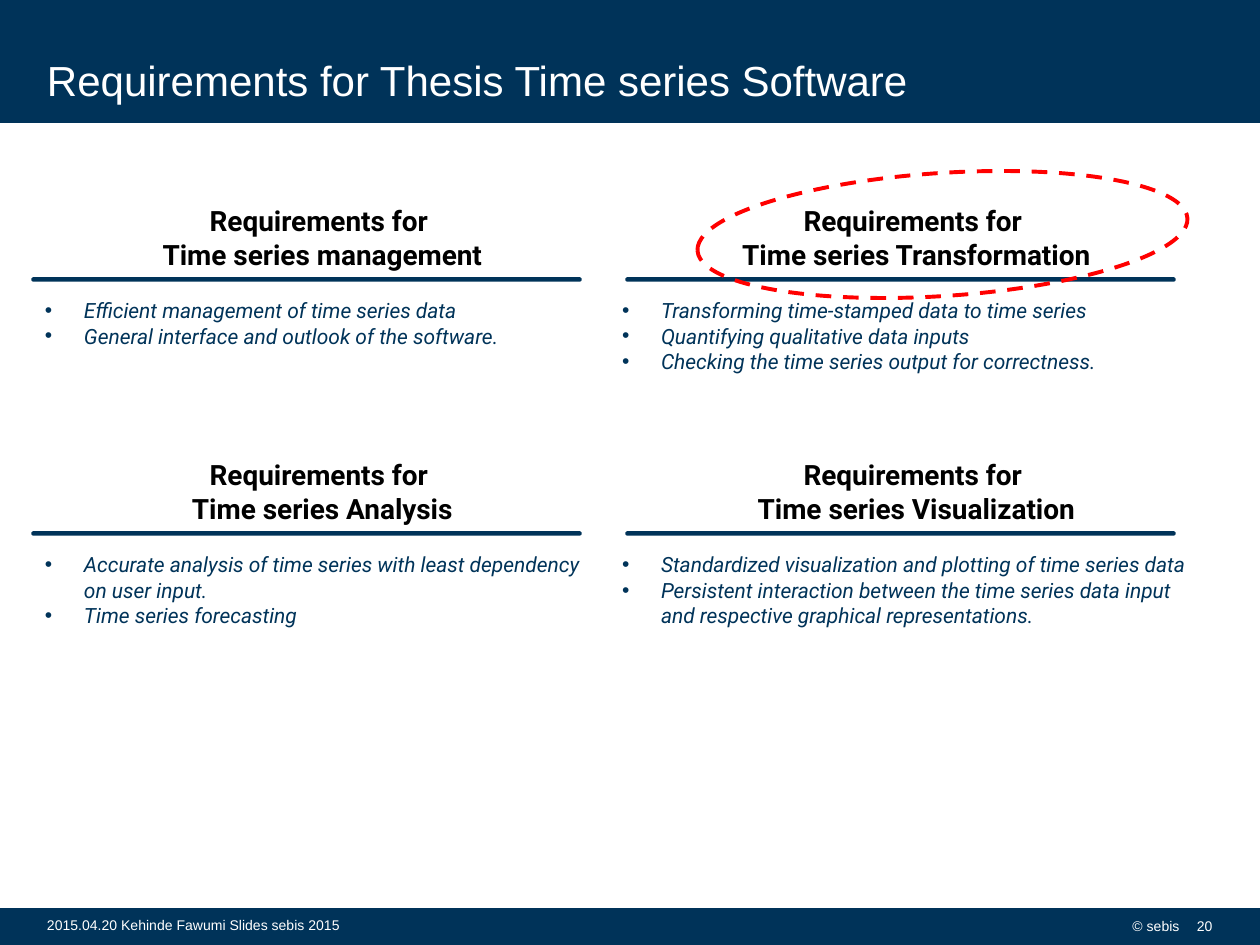
from dataclasses import dataclass
from typing import NamedTuple

from lxml.etree import SubElement
from pptx import Presentation
from pptx.dml.color import RGBColor
from pptx.enum.dml import MSO_LINE
from pptx.enum.shapes import MSO_SHAPE
from pptx.enum.text import MSO_ANCHOR, PP_ALIGN
from pptx.oxml.ns import qn
from pptx.util import Emu, Pt

PX_PER_INCH = 126


def px(length: int) -> Emu:
    return Emu(round(length * 914400 / PX_PER_INCH))


@dataclass(frozen=True)
class Theme:
    navy: RGBColor = RGBColor(0x00, 0x33, 0x59)
    white: RGBColor = RGBColor(0xFF, 0xFF, 0xFF)
    black: RGBColor = RGBColor(0x00, 0x00, 0x00)
    red: RGBColor = RGBColor(0xFF, 0x00, 0x00)
    frame_font: str = "Arial"
    content_font: str = "Roboto"
    title_size: int = 24
    heading_size: int = 16
    body_size: int = 12
    footer_size: int = 8


class Box(NamedTuple):
    left: int
    top: int
    width: int
    height: int

    def emu(self) -> list[Emu]:
        return [px(length) for length in self]


class Requirement(NamedTuple):
    topic: str
    points: list[str]


class Column(NamedTuple):
    left: int
    body_left: int
    body_width: int


class Footer(NamedTuple):
    box: Box
    text: str
    align: PP_ALIGN
    wrap: bool
    left_inset: int


THEME = Theme()
BULLET_INDENT = 39
COLUMNS = [Column(32, 32, 561), Column(626, 609, 599)]
ROW_TOPS = [198, 452]
FOOTERS = [
    Footer(Box(970, 906, 222, 40), "© sebis", PP_ALIGN.RIGHT, False, 0),
    Footer(Box(34, 905, 596, 40), "2015.04.20 Kehinde Fawumi Slides sebis 2015",
           PP_ALIGN.LEFT, True, 13),
    Footer(Box(1191, 906, 34, 40), "20", PP_ALIGN.RIGHT, False, 0),
]
REQUIREMENTS = [
    [
        Requirement("Time series management", [
            "Efficient management of time series data",
            "General interface and outlook of the software.",
        ]),
        Requirement("Time series Transformation", [
            "Transforming time-stamped data to time series",
            "Quantifying qualitative data inputs",
            "Checking the time series output for correctness.",
        ]),
    ],
    [
        Requirement("Time series Analysis", [
            "Accurate analysis of time series with least dependency on user input.",
            "Time series forecasting",
        ]),
        Requirement("Time series Visualization", [
            "Standardized visualization and plotting of time series data",
            "Persistent interaction between the time series data input "
            "and respective graphical representations.",
        ]),
    ],
]


def add_bullet(para) -> None:
    properties = para._p.get_or_add_pPr()
    properties.set("marL", str(px(BULLET_INDENT)))
    properties.set("indent", str(-px(BULLET_INDENT)))
    SubElement(properties, qn("a:buFont")).set("typeface", "Arial")
    SubElement(properties, qn("a:buChar")).set("char", "•")


def add_text(page, box: Box, *lines: str, size: int, color: RGBColor, font: str,
             bold: bool = False, italic: bool = False, bullets: bool = False,
             align: PP_ALIGN = PP_ALIGN.LEFT, anchor: MSO_ANCHOR = MSO_ANCHOR.TOP,
             wrap: bool = True, vertical_inset: int = 6, left_inset: int = 13) -> None:
    frame = page.shapes.add_textbox(*box.emu()).text_frame
    frame.word_wrap = wrap
    frame.vertical_anchor = anchor
    frame.margin_top = frame.margin_bottom = px(vertical_inset)
    frame.margin_left = px(left_inset)
    for index, line in enumerate(lines):
        para = frame.add_paragraph() if index else frame.paragraphs[0]
        para.text = line
        para.alignment = align
        if bullets:
            add_bullet(para)
        for span in para.runs:
            span.font.size = Pt(size)
            span.font.name = font
            span.font.color.rgb = color
            span.font.bold = bold
            span.font.italic = italic


def add_bar(page, box: Box, line_width: float, kind: MSO_SHAPE = MSO_SHAPE.RECTANGLE):
    bar = page.shapes.add_shape(kind, *box.emu())
    bar.shadow.inherit = False
    bar.fill.solid()
    bar.fill.fore_color.rgb = THEME.navy
    bar.line.color.rgb = THEME.navy
    bar.line.width = Pt(line_width)
    return bar


def add_frame(page) -> None:
    """Draw the title band and the footer band with their text."""
    add_bar(page, Box(0, 909, 1260, 36), 1.35)
    add_bar(page, Box(0, 1, 1260, 121), 1.35)
    add_text(page, Box(34, 6, 1038, 99), "Requirements for Thesis Time series Software",
             size=THEME.title_size, color=THEME.white, font=THEME.frame_font,
             anchor=MSO_ANCHOR.BOTTOM, vertical_inset=0)
    for footer in FOOTERS:
        add_text(page, footer.box, footer.text, size=THEME.footer_size, color=THEME.white,
                 font=THEME.frame_font, align=footer.align, anchor=MSO_ANCHOR.MIDDLE,
                 wrap=footer.wrap, left_inset=footer.left_inset)


def add_requirement(page, requirement: Requirement, column: Column, top: int) -> None:
    rule = add_bar(page, Box(column.left, top + 80, 549, 3), 0.85, MSO_SHAPE.ROUNDED_RECTANGLE)
    rule.adjustments[0] = 0.5
    add_text(page, Box(column.left + 85, top, 410, 81),
             f"Requirements for \v{requirement.topic}",
             size=THEME.heading_size, color=THEME.black, font=THEME.content_font,
             bold=True, align=PP_ALIGN.CENTER)
    add_text(page, Box(column.body_left, top + 94, column.body_width, 89), *requirement.points,
             size=THEME.body_size, color=THEME.navy, font=THEME.content_font,
             italic=True, bullets=True)


def add_highlight(page, box: Box, rotation: float) -> None:
    ellipse = page.shapes.add_shape(MSO_SHAPE.OVAL, *box.emu())
    ellipse.shadow.inherit = False
    ellipse.fill.background()
    ellipse.line.color.rgb = THEME.red
    ellipse.line.width = Pt(2.25)
    ellipse.line.dash_style = MSO_LINE.DASH
    ellipse.rotation = rotation


def main() -> None:
    deck = Presentation()
    deck.slide_width, deck.slide_height = px(1260), px(945)
    page = deck.slides.add_slide(deck.slide_layouts[6])
    add_frame(page)
    for top, row in zip(ROW_TOPS, REQUIREMENTS):
        for column, requirement in zip(COLUMNS, row):
            add_requirement(page, requirement, column, top)
    add_highlight(page, Box(697, 173, 491, 123), 356.2)
    deck.save("out.pptx")


if __name__ == "__main__":
    main()
